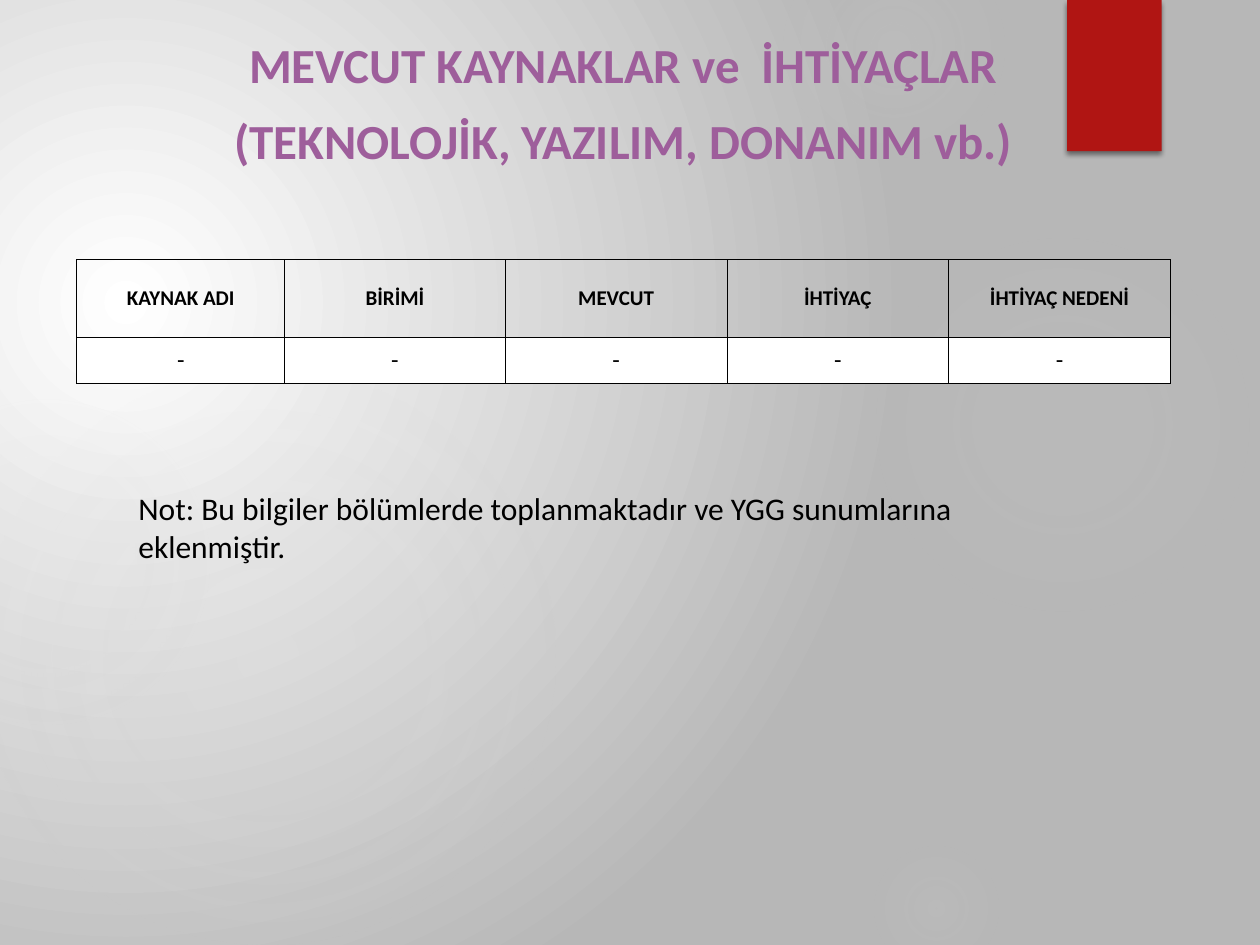
from pptx import Presentation
from pptx.dml.color import RGBColor
from pptx.enum.shapes import MSO_SHAPE
from pptx.enum.text import MSO_ANCHOR, PP_ALIGN
from pptx.oxml import parse_xml
from pptx.oxml.ns import nsdecls, qn
from pptx.util import Inches, Pt

OVAL, RECT = MSO_SHAPE.OVAL, MSO_SHAPE.RECTANGLE
CENTER, LEFT = PP_ALIGN.CENTER, PP_ALIGN.LEFT
MIDDLE, BOTTOM = MSO_ANCHOR.MIDDLE, MSO_ANCHOR.BOTTOM
FONT = "Calibri"
BLACK, WHITE, RED, PURPLE = "000000", "FFFFFF", "B01513", "9E5E9B"

TITLE = ["MEVCUT KAYNAKLAR ve  İHTİYAÇLAR", "(TEKNOLOJİK, YAZILIM, DONANIM vb.)"]
NOTE = "Not: Bu bilgiler bölümlerde toplanmaktadır ve YGG sunumlarına eklenmiştir."
ROWS = [
    ["KAYNAK ADI", "BİRİMİ", "MEVCUT", "İHTİYAÇ", "İHTİYAÇ NEDENİ"],
    ["-"] * 5,
]
COL_WIDTHS = [1.65, 1.75, 1.76, 1.76, 1.76]
ROW_HEIGHTS = [0.62, 0.36]
BACKGROUND_STOPS = [(0, WHITE, 100), (100, "B7B7B7", 100)]
GLOWS = [
    (6.89, 1.83, 3.08, [(0, 7), (36, 6), (69, 0)]),
    (6.22, -0.5, 1.75, [(0, 14), (36, 7), (73, 0)]),
    (6.89, 6.67, 1.08, [(0, 9), (36, 5), (66, 0)]),
    (-0.17, 2.92, 4.58, [(0, 11), (36, 10), (75, 0)]),
    (-0.92, 3.17, 2.58, [(0, 8), (36, 8), (72, 0)]),
]


def rgb(value):
    return RGBColor.from_string(value)


def radial_fill(fill, element, stops, focus):
    fill.gradient()
    grad = next(element.iter(qn("a:gradFill")))
    gs = "".join(
        f'<a:gs pos="{pos * 1000}"><a:srgbClr val="{color}">'
        f'<a:alpha val="{alpha * 1000}"/></a:srgbClr></a:gs>'
        for pos, color, alpha in stops
    )
    rect = " ".join(f'{side}="{v * 1000}"' for side, v in zip("ltrb", focus))
    grad.getparent().replace(grad, parse_xml(
        f'<a:gradFill {nsdecls("a")} rotWithShape="1"><a:gsLst>{gs}</a:gsLst>'
        f'<a:path path="circle"><a:fillToRect {rect}/></a:path></a:gradFill>'
    ))


def add_plain_shape(slide, kind, left, top, width, height):
    sp = slide.shapes.add_shape(
        kind, Inches(left), Inches(top), Inches(width), Inches(height))
    sp.shadow.inherit = False
    sp.line.fill.background()
    return sp


def write(tf, lines, size, color=BLACK, bold=False, align=LEFT):
    tf.text = "\n".join(lines)
    tf.word_wrap = True
    for p in tf.paragraphs:
        p.alignment = align
        for r in p.runs:
            r.font.name = FONT
            r.font.size = Pt(size)
            r.font.bold = bold
            r.font.color.rgb = rgb(color)


def add_text(slide, left, top, width, height, lines, size, **style):
    box = slide.shapes.add_textbox(
        Inches(left), Inches(top), Inches(width), Inches(height))
    write(box.text_frame, lines, size, **style)
    return box.text_frame


def add_borders(cell):
    tcPr = cell._tc.get_or_add_tcPr()
    for i, side in enumerate("LRTB"):
        tcPr.insert(i, parse_xml(
            f'<a:ln{side} {nsdecls("a")} w="{Pt(0.5)}"><a:solidFill>'
            f'<a:srgbClr val="{BLACK}"/></a:solidFill></a:ln{side}>'
        ))


def add_backdrop(slide):
    radial_fill(slide.background.fill, slide.element, BACKGROUND_STOPS, (45, 65, 125, 100))
    for left, top, size, stops in GLOWS:
        sp = add_plain_shape(slide, OVAL, left, top, size, size)
        glow = [(pos, "D9D9D9", alpha) for pos, alpha in stops]
        radial_fill(sp.fill, sp.element, glow, (50, 50, 50, 50))

    ribbon = add_plain_shape(slide, RECT, 8.47, 0, 0.75, 1.2)
    ribbon.fill.solid()
    ribbon.fill.fore_color.rgb = rgb(RED)
    effects = ribbon.element.spPr.find(qn("a:effectLst"))
    effects.append(parse_xml(
        f'<a:outerShdw {nsdecls("a")} blurRad="{Pt(3)}" dist="{Pt(2)}" dir="5400000" '
        f'rotWithShape="0"><a:srgbClr val="{BLACK}"><a:alpha val="45000"/></a:srgbClr>'
        '</a:outerShdw>'
    ))


def add_resource_table(slide):
    table = slide.shapes.add_table(
        len(ROWS), len(COL_WIDTHS), Inches(0.61), Inches(2.06),
        Inches(sum(COL_WIDTHS)), Inches(sum(ROW_HEIGHTS))).table
    table.horz_banding = False
    for col, width in zip(table.columns, COL_WIDTHS):
        col.width = Inches(width)
    for i, (row, height) in enumerate(zip(table.rows, ROW_HEIGHTS)):
        row.height = Inches(height)
        header = i == 0
        for cell, text in zip(row.cells, ROWS[i]):
            write(cell.text_frame, [text], 12 if header else 14, bold=header, align=CENTER)
            cell.vertical_anchor = MIDDLE
            cell.margin_left = cell.margin_right = cell.margin_top = cell.margin_bottom = 0
            if header:
                cell.fill.background()
            else:
                cell.fill.solid()
                cell.fill.fore_color.rgb = rgb(WHITE)
            add_borders(cell)


def main():
    prs = Presentation()
    prs.slide_width, prs.slide_height = Inches(10), Inches(7.5)
    slide = prs.slides.add_slide(prs.slide_layouts[6])
    add_backdrop(slide)

    title = add_text(slide, 1.72, 0.38, 6.45, 1.01, TITLE, 28,
                     color=PURPLE, bold=True, align=CENTER)
    title.vertical_anchor = BOTTOM
    for p in title.paragraphs:
        p.line_spacing = 1.1
        p.space_after = Pt(6)

    add_resource_table(slide)
    add_text(slide, 1, 3.83, 7.61, 0.71, [NOTE], 18)
    prs.save("out.pptx")


if __name__ == "__main__":
    main()
